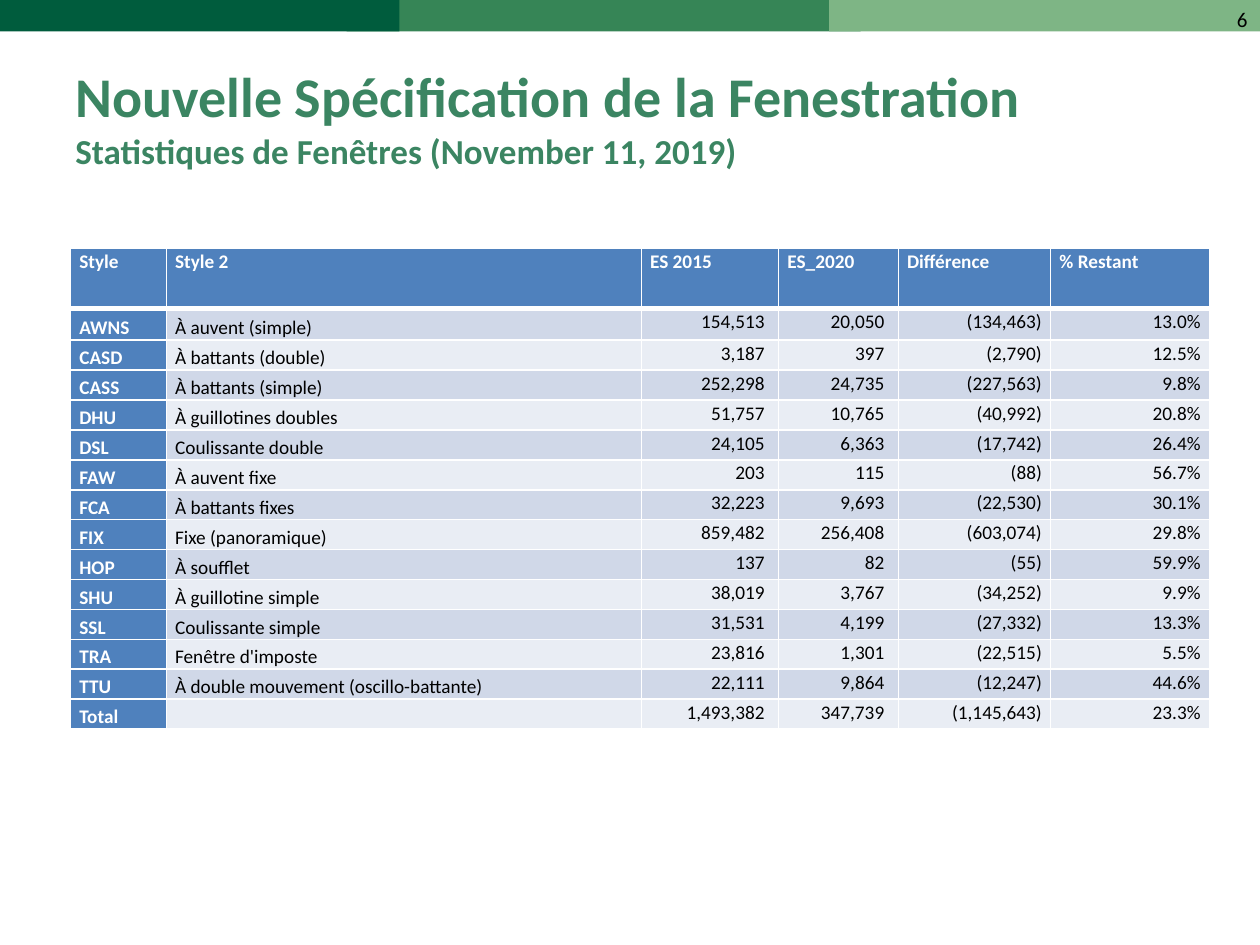
from lxml import etree
from pptx import Presentation
from pptx.dml.color import RGBColor
from pptx.enum import shapes, text
from pptx.oxml import ns
from pptx.util import Inches, Pt

BANDS = [(2.75, 4.08, "368556"), (0, 3.17, "005C3D"), (6.58, 3.42, "7EB585")]
PAGE_NUMBER = "6"
TITLE = "Nouvelle Spécification de la Fenestration"
SUBTITLE = "Statistiques de Fenêtres (November 11, 2019)"
HEADINGS = ("Style", "Style 2", "ES 2015", "ES_2020", "Différence", "% Restant")
WINDOWS = [
    ("AWNS", "À auvent (simple)", "154,513", "20,050", "(134,463)", "13.0%"),
    ("CASD", "À battants (double)", "3,187", "397", "(2,790)", "12.5%"),
    ("CASS", "À battants (simple)", "252,298", "24,735", "(227,563)", "9.8%"),
    ("DHU", "À guillotines doubles", "51,757", "10,765", "(40,992)", "20.8%"),
    ("DSL", "Coulissante double", "24,105", "6,363", "(17,742)", "26.4%"),
    ("FAW", "À auvent fixe", "203", "115", "(88)", "56.7%"),
    ("FCA", "À battants fixes", "32,223", "9,693", "(22,530)", "30.1%"),
    ("FIX", "Fixe (panoramique)", "859,482", "256,408", "(603,074)", "29.8%"),
    ("HOP", "À soufflet", "137", "82", "(55)", "59.9%"),
    ("SHU", "À guillotine simple", "38,019", "3,767", "(34,252)", "9.9%"),
    ("SSL", "Coulissante simple", "31,531", "4,199", "(27,332)", "13.3%"),
    ("TRA", "Fenêtre d'imposte", "23,816", "1,301", "(22,515)", "5.5%"),
    ("TTU", "À double mouvement (oscillo-battante)", "22,111", "9,864", "(12,247)", "44.6%"),
    ("Total", "", "1,493,382", "347,739", "(1,145,643)", "23.3%"),
]
COLUMN_WIDTHS = (0.76, 3.77, 1.09, 0.95, 1.21, 1.26)
TABLE_HEIGHT, HEADER_HEIGHT, FIRST_HEIGHT = 3.82, 0.48, 0.25
ACCENT, STRIPES = "4F81BD", ("D0D8E8", "E9EDF4")
GREEN, WHITE, BLACK = "3B8562", "FFFFFF", "000000"


def rgb(value):
    return RGBColor.from_string(value)


def write(paragraph, words, size=11, color=BLACK, bold=False, align=None, spacing=None):
    paragraph.alignment = align
    paragraph.line_spacing = spacing
    if not words:
        end = etree.SubElement(paragraph._p, ns.qn("a:endParaRPr"))
        end.set("sz", str(size * 100))
        return
    run = paragraph.add_run()
    run.text = words
    run.font.name = "Calibri"
    run.font.size = Pt(size)
    run.font.bold = bold
    run.font.color.rgb = rgb(color)


def add_frame(slide, left, top, width, height, anchor):
    frame = slide.shapes.add_textbox(*map(Inches, (left, top, width, height))).text_frame
    frame.word_wrap = True
    frame.vertical_anchor = anchor
    return frame


def add_borders(cell, **widths):
    properties = cell._tc.get_or_add_tcPr()
    for side in "LRTB":
        line = etree.SubElement(properties, ns.qn(f"a:ln{side}"), w=str(Pt(widths.get(side, 1))))
        fill = etree.SubElement(line, ns.qn("a:solidFill"))
        etree.SubElement(fill, ns.qn("a:srgbClr"), val=WHITE)


def fill_cell(cell, row, column, words):
    header, label, number = row == 0, column == 0, row > 0 and column > 1
    cell.margin_left = Inches(0.07)
    cell.margin_right = Inches(0.11 if number and column < 4 else 0.07)
    cell.margin_top = cell.margin_bottom = 0
    top_anchored = header or number
    cell.vertical_anchor = text.MSO_ANCHOR.TOP if top_anchored else text.MSO_ANCHOR.BOTTOM
    add_borders(cell, T=3 if row == 1 else 1, B=3 if header else 1)
    accented = header or label
    cell.fill.solid()
    cell.fill.fore_color.rgb = rgb(ACCENT if accented else STRIPES[(row - 1) % 2])
    write(cell.text_frame.paragraphs[0], words, color=WHITE if accented else BLACK,
          bold=accented, align=text.PP_ALIGN.RIGHT if number else None, spacing=1.07)


def add_statistics(slide):
    rows = [HEADINGS, *WINDOWS]
    table = slide.shapes.add_table(
        len(rows), len(HEADINGS), Inches(0.56), Inches(1.97),
        Inches(sum(COLUMN_WIDTHS)), Inches(TABLE_HEIGHT)).table
    for column, width in zip(table.columns, COLUMN_WIDTHS):
        column.width = Inches(width)
    rest = len(rows) - 2
    row_height = (TABLE_HEIGHT - HEADER_HEIGHT - FIRST_HEIGHT) / rest
    for line, height in zip(table.rows, [HEADER_HEIGHT, FIRST_HEIGHT] + [row_height] * rest):
        line.height = Inches(height)
    for r, row in enumerate(rows):
        for c, words in enumerate(row):
            fill_cell(table.cell(r, c), r, c, words)


def main():
    deck = Presentation()
    deck.slide_width, deck.slide_height = Inches(10), Inches(7.5)
    slide = deck.slides.add_slide(deck.slide_layouts[6])

    for left, width, color in BANDS:
        band = slide.shapes.add_shape(
            shapes.MSO_SHAPE.RECTANGLE, Inches(left), 0, Inches(width), Inches(0.25))
        band.shadow.inherit = False
        band.fill.solid()
        band.fill.fore_color.rgb = rgb(color)
        band.line.fill.background()

    page = add_frame(slide, 7.67, 0, 2.33, 0.52, text.MSO_ANCHOR.TOP)
    write(page.paragraphs[0], PAGE_NUMBER, size=12, align=text.PP_ALIGN.RIGHT)

    heading = add_frame(slide, 0.5, 0.3, 9, 1.25, text.MSO_ANCHOR.MIDDLE).paragraphs[0]
    write(heading, TITLE, size=32, color=GREEN, bold=True)
    heading.add_line_break()
    write(heading, SUBTITLE, size=20, color=GREEN, bold=True)

    add_statistics(slide)
    deck.save("out.pptx")


if __name__ == "__main__":
    main()
